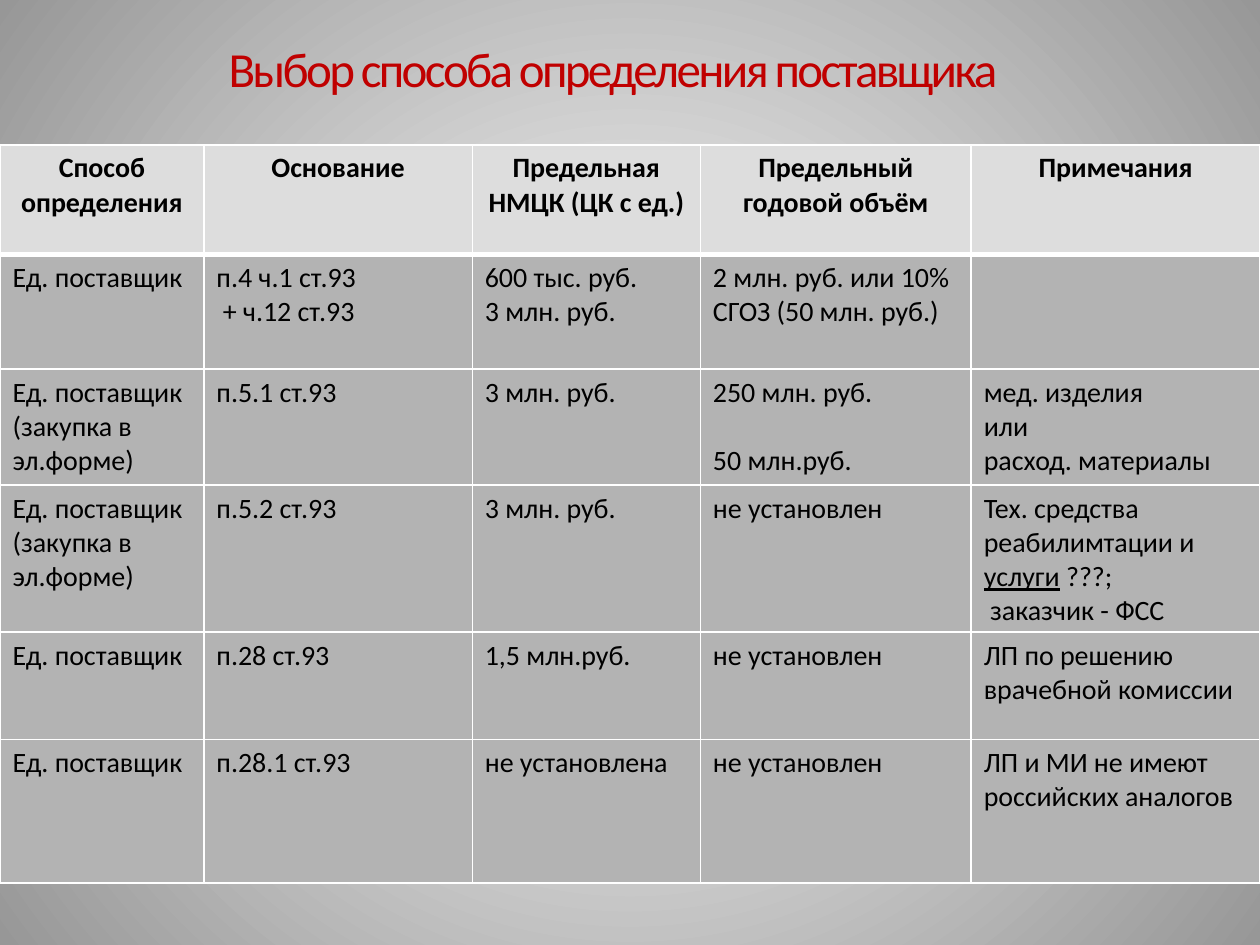
from lxml import etree
from pptx import Presentation, util as u
from pptx.dml import color as dml
from pptx.enum import text
from pptx.oxml import ns

TITLE = "Выбор способа определения поставщика"
COLUMN_WIDTHS = [4.11, 5.41, 4.6, 5.46, 5.82]
ROW_HEIGHTS = [2.21, 2.31, 2.34, 2.95, 2.16, 2.9]
SUPPLIER = "Ед. поставщик"
ELECTRONIC = SUPPLIER + " (закупка в эл.форме)"
NO_LIMIT = "не установлен"

# Line breaks part paragraphs; underscores enclose underlined words
ROWS = [
    ["Способ определения", "Основание", "Предельная НМЦК (ЦК с ед.)",
     "Предельный годовой объём", "Примечания"],
    [SUPPLIER, "п.4 ч.1 ст.93\n + ч.12 ст.93", "600 тыс. руб.\n3 млн. руб.",
     "2 млн. руб. или 10% СГОЗ (50 млн. руб.)", ""],
    [ELECTRONIC, "п.5.1 ст.93", "3 млн. руб.", "250 млн. руб.\n50 млн.руб.",
     "мед. изделия\nили\nрасход. материалы"],
    [ELECTRONIC, "п.5.2 ст.93", "3 млн. руб.", NO_LIMIT,
     "Тех. средства реабилимтации и _услуги_ ???;\n заказчик - ФСС"],
    [SUPPLIER, "п.28 ст.93", "1,5 млн.руб.", NO_LIMIT,
     "ЛП по решению врачебной комиссии"],
    [SUPPLIER, "п.28.1 ст.93", "не установлена", NO_LIMIT,
     "ЛП и МИ не имеют российских аналогов"],
]


def rgb(value):
    return dml.RGBColor.from_string(value)


class SlideBuilder:
    font = "Calibri"
    title_color, text_color, line_color = "C00000", "000000", "FFFFFF"
    header_fill, body_fill = "DDDDDD", "B3B3B3"

    def __init__(self, slide):
        self.slide = slide

    def background(self, center, edge):
        fill = self.slide.background.fill
        fill.gradient()
        for stop, value in zip(fill.gradient_stops, (center, edge)):
            stop.color.rgb = rgb(value)
        gradient = self.slide.element.find(".//" + ns.qn("a:gradFill"))
        gradient.remove(gradient.find(ns.qn("a:lin")))
        circle = etree.SubElement(gradient, ns.qn("a:path"), path="circle")
        etree.SubElement(circle, ns.qn("a:fillToRect"),
                         l="50000", t="50000", r="50000", b="50000")

    def style(self, font, size, value, bold=False):
        font.name, font.size, font.bold = self.font, u.Pt(size), bold
        font.color.rgb = rgb(value)

    def title(self, content, left, top, width, height):
        shape = self.slide.shapes.add_textbox(
            u.Cm(left), u.Cm(top), u.Cm(width), u.Cm(height))
        frame = shape.text_frame
        frame.word_wrap = True
        frame.margin_left = frame.margin_right = 0
        frame.margin_top = frame.margin_bottom = 0
        frame.text = content
        paragraph = frame.paragraphs[0]
        paragraph.alignment = text.PP_ALIGN.CENTER
        paragraph.line_spacing = 0.9
        run = paragraph.runs[0]
        self.style(run.font, 28, self.title_color)
        run.font._element.set("spc", "-150")

    def borders(self, cell, widths):
        properties = cell._tc.get_or_add_tcPr()
        for index, (side, width) in enumerate(widths.items()):
            line = etree.Element(ns.qn("a:ln" + side), w=str(u.Pt(width)))
            solid = etree.SubElement(line, ns.qn("a:solidFill"))
            etree.SubElement(solid, ns.qn("a:srgbClr"), val=self.line_color)
            properties.insert(index, line)

    def cell(self, cell, content, header):
        cell.fill.solid()
        cell.fill.fore_color.rgb = rgb(self.header_fill if header else self.body_fill)
        frame = cell.text_frame
        frame.text = content.replace("_", "")
        for paragraph, line in zip(frame.paragraphs, content.split("\n")):
            if "_" in line:
                paragraph.clear()
                for index, part in enumerate(line.split("_")):
                    run = paragraph.add_run()
                    run.text = part
                    run.font.underline = index % 2 == 1
            if header:
                paragraph.alignment = text.PP_ALIGN.CENTER
            for item in paragraph.runs or [paragraph]:
                self.style(item.font, 16, self.text_color, header)

    def table(self, rows, left, top, widths, heights):
        table = self.slide.shapes.add_table(
            len(rows), len(widths), u.Cm(left), u.Cm(top),
            u.Cm(sum(widths)), u.Cm(sum(heights))).table
        table.horz_banding = False
        for column, width in zip(table.columns, widths):
            column.width = u.Cm(width)
        for row, height in zip(table.rows, heights):
            row.height = u.Cm(height)
        for row_index, row in enumerate(rows):
            sides = {"L": 1, "R": 1, "T": 3 if row_index == 1 else 1,
                     "B": 3 if row_index == 0 else 1}
            for column_index, content in enumerate(row):
                cell = table.cell(row_index, column_index)
                self.cell(cell, content, row_index == 0)
                self.borders(cell, sides)
        return table


def main():
    presentation = Presentation()
    presentation.slide_width, presentation.slide_height = u.Cm(25.4), u.Cm(19.05)
    builder = SlideBuilder(presentation.slides.add_slide(presentation.slide_layouts[6]))

    # Background and title
    builder.background("FFFFFF", "979797")
    builder.title(TITLE, 0.71, 0.91, 23.29, 1.07)

    # Procurement methods; the second annual limit stands one line lower
    table = builder.table(ROWS, 0, 2.92, COLUMN_WIDTHS, ROW_HEIGHTS)
    table.cell(2, 3).text_frame.paragraphs[1].space_before = u.Pt(19.5)

    presentation.save("out.pptx")


if __name__ == "__main__":
    main()
